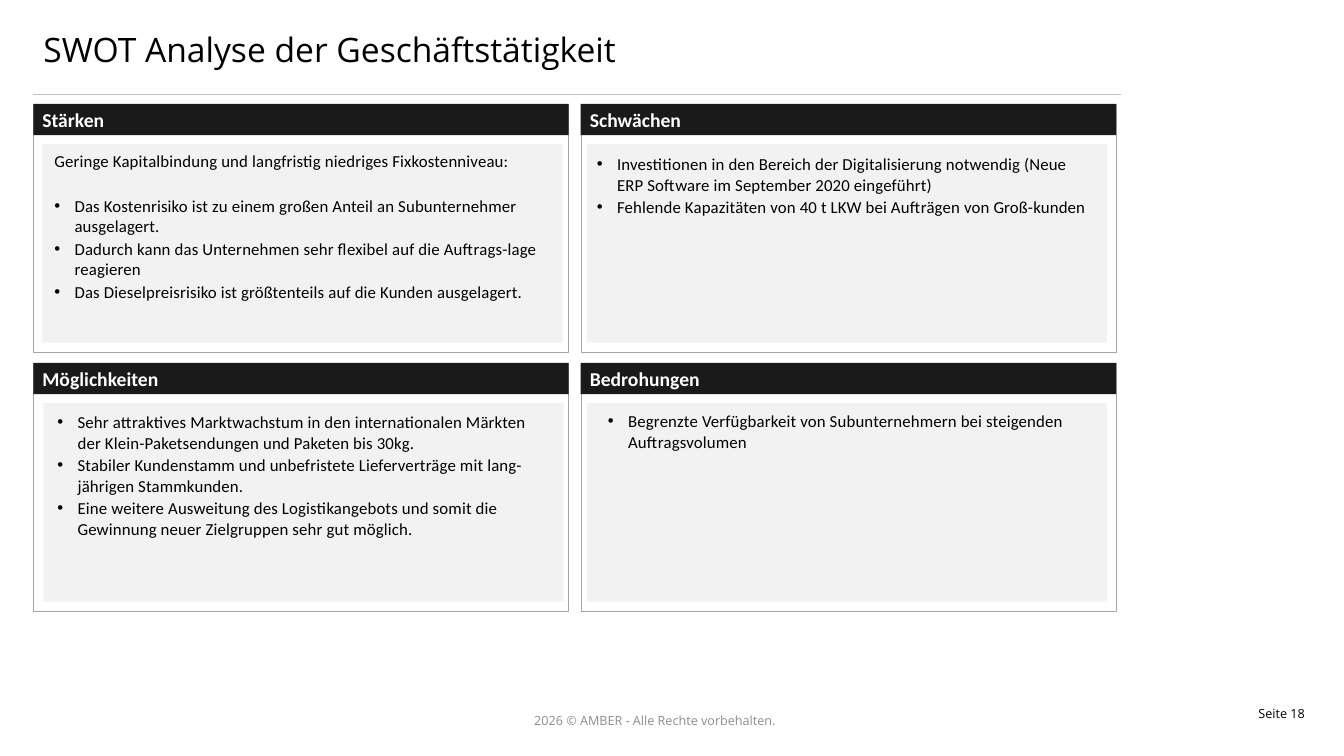
from lxml import etree
from pptx import Presentation, oxml
from pptx.dml import color
from pptx.enum import shapes, text
from pptx.oxml import ns
from pptx.util import Inches, Pt

HUES = {"black": "000000", "white": "FFFFFF", "head": "1A1A1A", "fill": "F2F2F2",
        "edge": "A5A5A5", "rule": "C1C1C1", "foot": "8C8C8C"}
SIZE = (5.31, 2.46)
LEFT, TOP, STEP_X, STEP_Y = 0.33, 1.03, 5.43, 2.57

PANELS = [
    {"head": "Stärken", "pad": 0.09, "text": (0, 0.41, 5.24),
     "intro": "Geringe Kapitalbindung und langfristig niedriges Fixkostenniveau:",
     "items": [
         "Das Kostenrisiko ist zu einem großen Anteil an Subunternehmer ausgelagert.",
         "Dadurch kann das Unternehmen sehr flexibel auf die Auftrags-lage reagieren",
         "Das Dieselpreisrisiko ist größtenteils auf die Kunden ausgelagert."]},
    {"head": "Schwächen", "pad": 0.06, "text": (-0.05, 0.44, 5.21),
     "items": [
         "Investitionen in den Bereich der Digitalisierung notwendig "
         "(Neue ERP Software im September 2020 eingeführt)",
         "Fehlende Kapazitäten von 40 t LKW bei Aufträgen von Groß-kunden"]},
    {"head": "Möglichkeiten", "pad": 0.1, "text": (0.03, 0.43, 5.23),
     "items": [
         "Sehr attraktives Marktwachstum in den internationalen Märkten "
         "der Klein-Paketsendungen und Paketen bis 30kg.",
         "Stabiler Kundenstamm und unbefristete Lieferverträge mit lang-jährigen Stammkunden.",
         "Eine weitere Ausweitung des Logistikangebots und somit die "
         "Gewinnung neuer Zielgruppen sehr gut möglich."]},
    {"head": "Bedrohungen", "pad": 0.06, "text": (0.06, 0.42, 5.1),
     "items": [
         "Begrenzte Verfügbarkeit von Subunternehmern bei steigenden Auftragsvolumen"]},
]


def rgb(name):
    """Look up a colour by name."""
    return color.RGBColor.from_string(HUES[name])


def place(shape, box):
    """Move a shape to a box in inches."""
    shape.left, shape.top, shape.width, shape.height = map(Inches, box)


def write(para, words, size=12, face="Calibri", hue="black", bold=False,
          align=text.PP_ALIGN.LEFT, lead=1.0, gap=0, track=0, indent=None, bullet=None):
    """Fill one paragraph with formatted text."""
    props = para._p.get_or_add_pPr()
    if indent:
        props.set("marL", str(Inches(indent[0])))
        props.set("indent", str(Inches(indent[1])))
        mark = etree.SubElement(props, ns.qn("a:buChar" if bullet else "a:buNone"))
        if bullet:
            mark.set("char", bullet)
    para.alignment, para.line_spacing = align, lead
    para.space_before, para.space_after = Pt(gap), Pt(0)
    run = para.add_run()
    run.text = words
    font = run.font
    font.size, font.name, font.bold = Pt(size), face, bold
    font.color.rgb = rgb(hue)
    if track:
        run._r.get_or_add_rPr().set("spc", str(track))


def setup(frame, anchor=text.MSO_ANCHOR.TOP):
    """Set wrapping, fit and anchor of a text frame."""
    frame.word_wrap = True
    frame.auto_size = text.MSO_AUTO_SIZE.NONE
    frame.vertical_anchor = anchor
    return frame


def block(slide, box, fill=None, edge=None):
    """Draw a plain rectangle."""
    rect = slide.shapes.add_shape(shapes.MSO_SHAPE.RECTANGLE, *map(Inches, box))
    rect.shadow.inherit = False
    if fill:
        rect.fill.solid()
        rect.fill.fore_color.rgb = rgb(fill)
    else:
        rect.fill.background()
    if edge:
        rect.line.color.rgb = rgb(edge)
        rect.line.width = Pt(0.25)
    else:
        rect.line.fill.background()
    return rect


def header(slide, box):
    """Place the title and the rule below it."""
    x, y, w, h = box
    title = slide.shapes.title
    place(title, box)
    frame = setup(title.text_frame, text.MSO_ANCHOR.MIDDLE)
    write(frame.paragraphs[0], "SWOT Analyse der Geschäftstätigkeit",
          size=24, face="Open Sans", lead=0.9)
    rule = slide.shapes.add_connector(
        shapes.MSO_CONNECTOR.STRAIGHT,
        *map(Inches, (x, y + 0.79, x + w + 0.03, y + 0.79)))
    rule.line.color.rgb = rgb("rule")
    rule.line.width = Pt(0.25)
    rule._element.spPr.append(oxml.parse_xml(f"<a:effectLst {ns.nsdecls('a')}/>"))


def panel(slide, box, data, body):
    """Draw one SWOT panel and its list."""
    x, y, w, h = box
    block(slide, box, edge="edge")
    block(slide, (x + data["pad"], y + 0.4, 5.16, 1.97), fill="fill")
    bar = block(slide, (x, y, w, 0.31), fill="head")
    frame = setup(bar.text_frame, text.MSO_ANCHOR.MIDDLE)
    frame.margin_left = Inches(0.09)
    frame.margin_top = frame.margin_right = frame.margin_bottom = 0
    write(frame.paragraphs[0], data["head"], size=14, hue="white", bold=True)

    dx, dy, width = data["text"]
    place(body, (x + dx, y + dy, width, 1.97))
    slide.shapes.element.append(body.element)
    frame = setup(body.text_frame)
    para, gap = frame.paragraphs[0], 0
    if "intro" in data:
        write(para, data["intro"], align=text.PP_ALIGN.JUSTIFY, lead=1.03,
              track=10, indent=(0.11, 0))
        para, gap = frame.add_paragraph(), 17
    for i, item in enumerate(data["items"]):
        if i:
            para, gap = frame.add_paragraph(), 1.1
        write(para, item, lead=1.03, gap=gap, track=10,
              indent=(0.31, -0.2), bullet="•")


def label(slide, box, words, anchor=text.MSO_ANCHOR.TOP, **fmt):
    """Add a small line of text at the foot."""
    note = slide.shapes.add_textbox(*map(Inches, box))
    frame = setup(note.text_frame, anchor)
    write(frame.paragraphs[0], words, size=9, face="Open Sans", **fmt)


def footer(slide, box):
    """Place the copyright line and the page number."""
    x, y, w, h = box
    label(slide, (x, y, 4.5, h), "2026 © AMBER - Alle Rechte vorbehalten.",
          anchor=text.MSO_ANCHOR.MIDDLE, hue="foot")
    label(slide, (x + w - 3, y, 3, h), "Seite 18", align=text.PP_ALIGN.RIGHT)


def main():
    """Build and save the slide."""
    deck = Presentation()
    deck.slide_width, deck.slide_height = Inches(13.33), Inches(7.5)
    slide = deck.slides.add_slide(deck.slide_layouts[4])
    bodies = [p for p in slide.placeholders if p.placeholder_format.idx]
    header(slide, (LEFT, 0.14, 10.76, 0.75))
    for i, (data, body) in enumerate(zip(PANELS, bodies)):
        row, col = divmod(i, 2)
        panel(slide, (LEFT + col * STEP_X, TOP + row * STEP_Y, *SIZE), data, body)
    footer(slide, (5.2, 6.95, 7.84, 0.4))
    deck.save("out.pptx")


if __name__ == "__main__":
    main()
